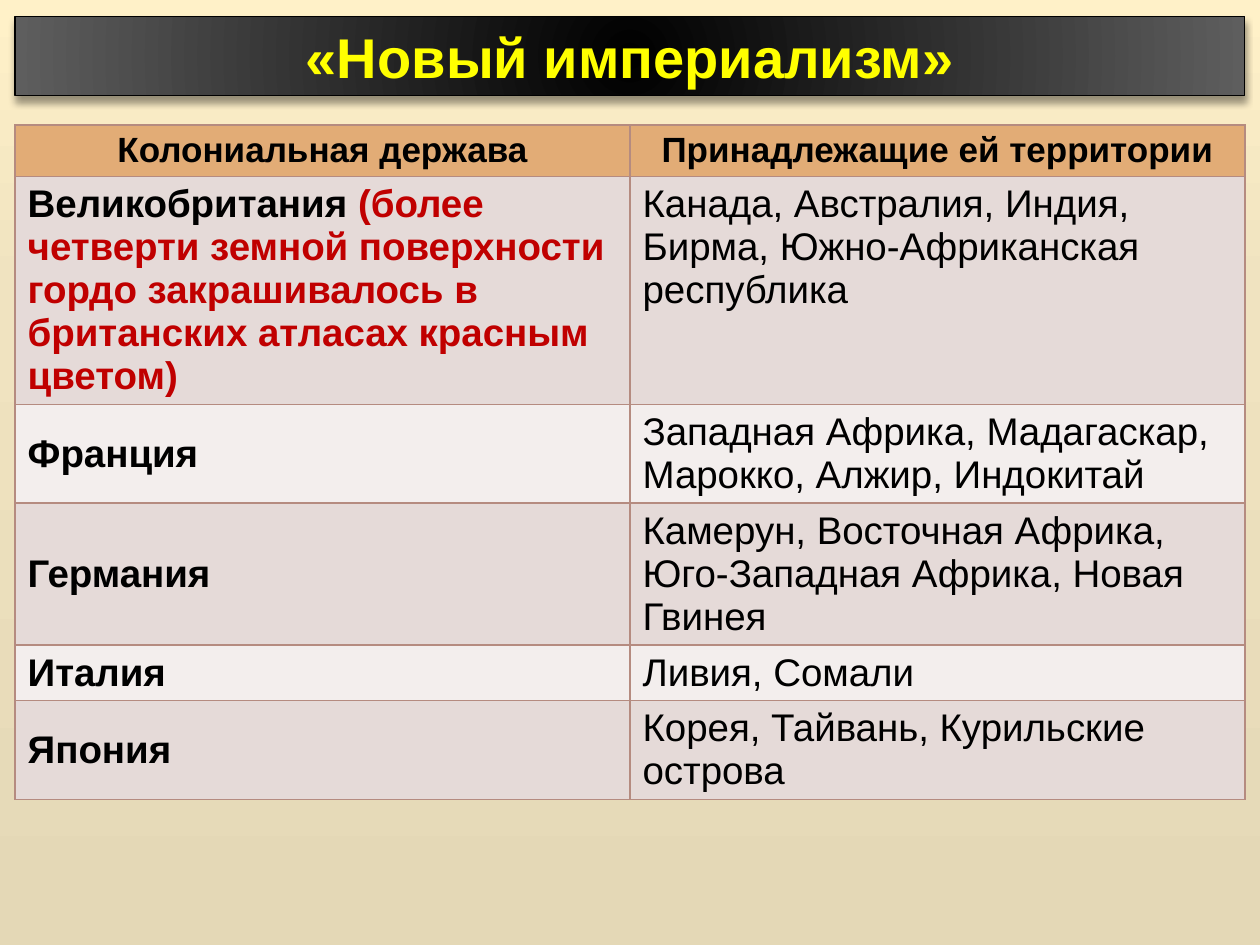
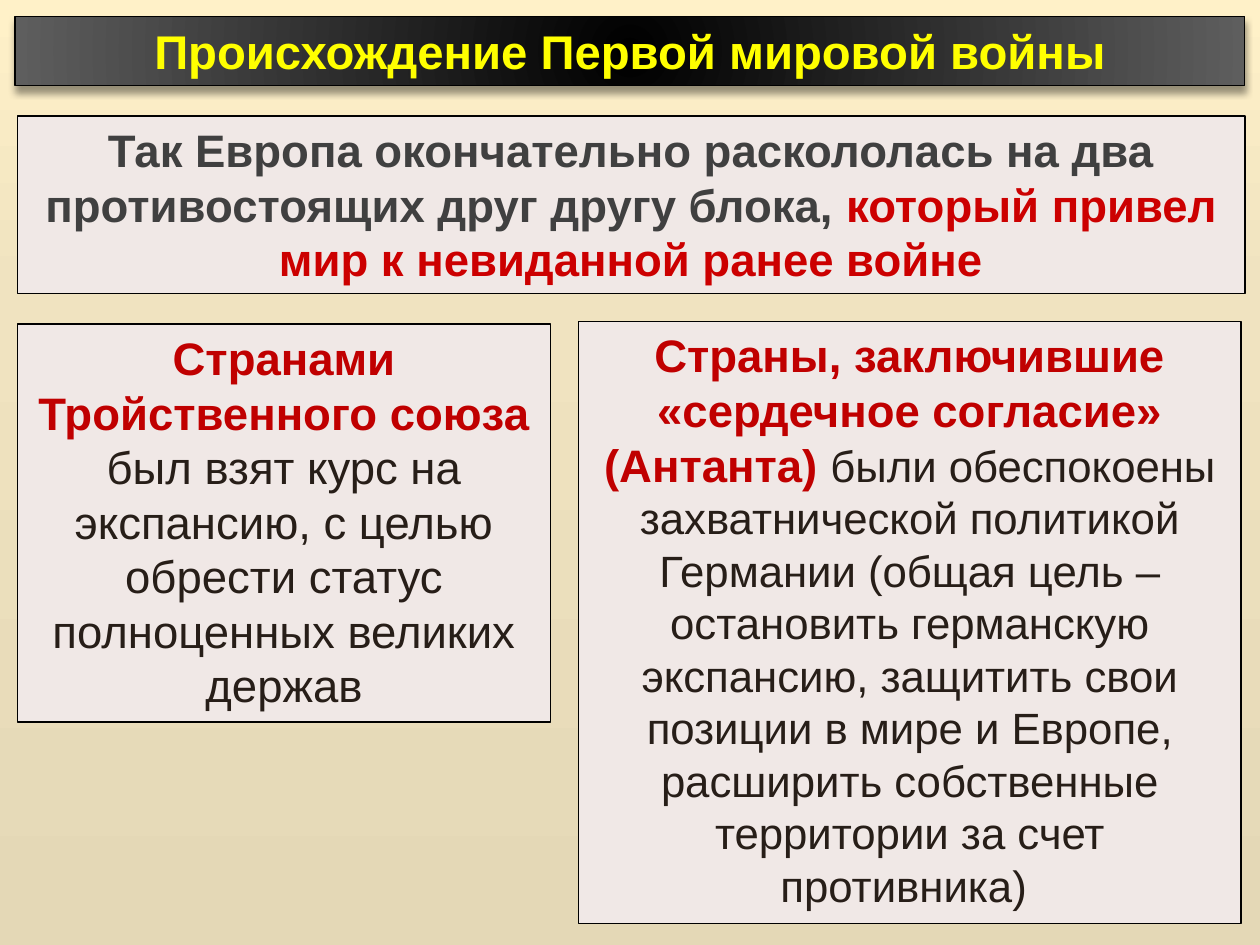
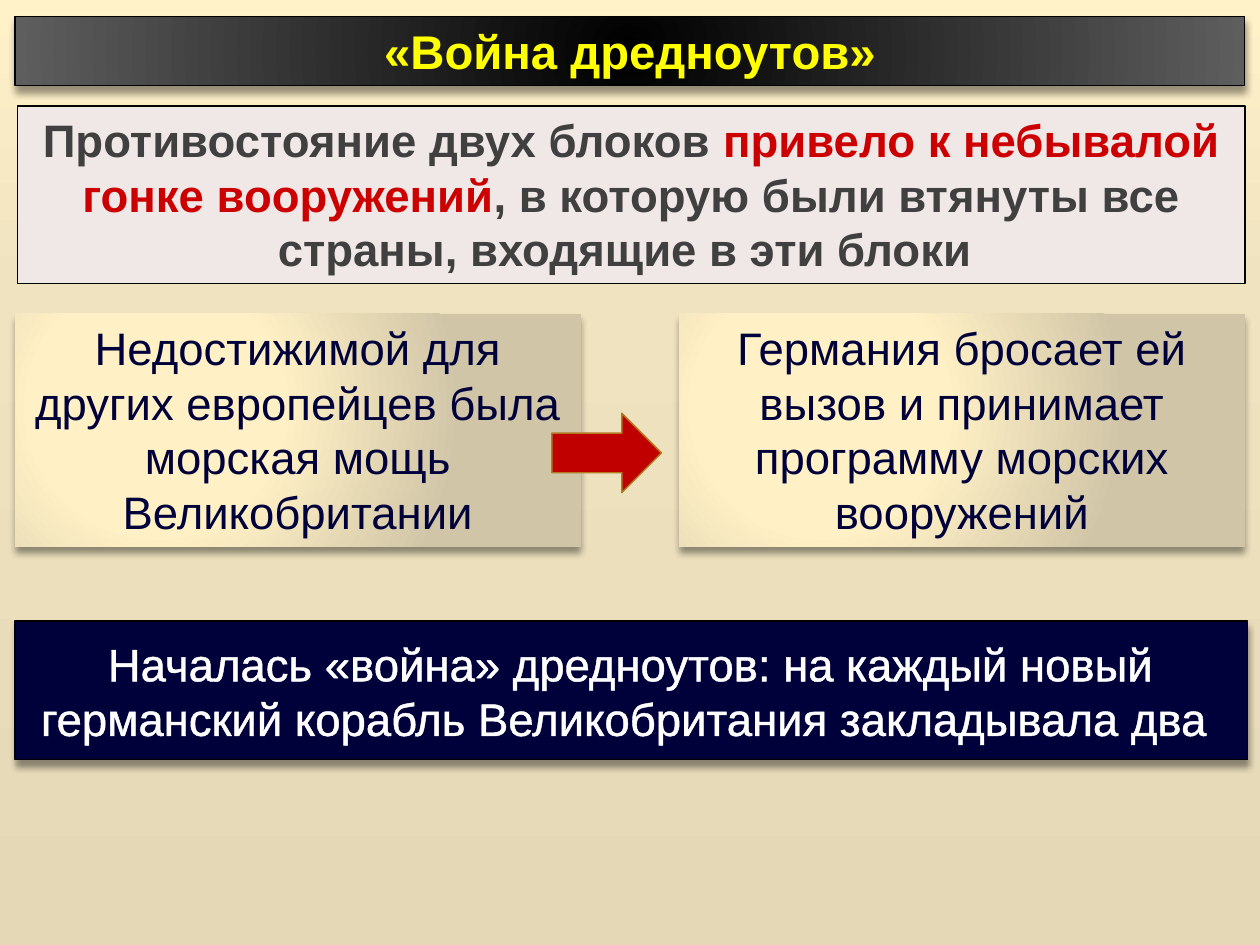
import pptx
import pptx.util
import pptx.oxml
import pptx.oxml.ns
import pptx.dml.color
import pptx.enum.shapes
import pptx.enum.text

Inches = pptx.util.Inches
Pt = pptx.util.Pt
RGB = pptx.dml.color.RGBColor
SHAPE = pptx.enum.shapes.MSO_SHAPE
ALIGN = pptx.enum.text.PP_ALIGN
ANCHOR = pptx.enum.text.MSO_ANCHOR
AUTO = pptx.enum.text.MSO_AUTO_SIZE

# Colours and type
FONT = "Arial"
BLACK = RGB(0x00, 0x00, 0x00)
WHITE = RGB(0xFF, 0xFF, 0xFF)
YELLOW = RGB(0xFF, 0xFF, 0x00)
GREY = RGB(0x40, 0x40, 0x40)
SMOKE = RGB(0x5E, 0x5E, 0x5E)
RED = RGB(0xCC, 0x00, 0x00)
DEEP = RGB(0xC0, 0x00, 0x00)
BROWN = RGB(0x27, 0x1E, 0x18)
NAVY = RGB(0x00, 0x00, 0x3A)
PANEL = RGB(0xF0, 0xE8, 0xE6)
GOLD = RGB(0xB2, 0x78, 0x22)
CREAM = RGB(0xFF, 0xF1, 0xC8)
HEAD = RGB(0xE2, 0xAC, 0x76)
BANDS = [RGB(0xE5, 0xDA, 0xD8), RGB(0xF3, 0xEE, 0xED)]
EDGE = RGB(0xB5, 0x8B, 0x80)

# Gradients: stops, then the centre (left, top, right, bottom) if round
PAGE = ([(0, CREAM), (31, RGB(0xF0, 0xE3, 0xC0)), (100, RGB(0xE4, 0xD8, 0xB6))], None)
BAND = ([(0, BLACK), (100, SMOKE)], (100, 100, 100, 100))
SAND = ([(0, CREAM), (41, RGB(0xFF, 0xF0, 0xC5)), (100, RGB(0xD0, 0xC5, 0xA7))],
        (50, 80, 100, 100))

# Shared places
LEFT, WIDE = 0.12, 9.76
INNER = 0.14

# Content: a run is (text, size, colour, bold)
HEADS = ["Колониальная держава", "Принадлежащие ей территории"]
POWERS = [
    ("Великобритания ",
     "(более четверти земной поверхности гордо закрашивалось в британских атласах красным цветом)",
     "Канада, Австралия, Индия, Бирма, Южно-Африканская республика"),
    ("Франция", "", "Западная Африка, Мадагаскар, Марокко, Алжир, Индокитай"),
    ("Германия", "", "Камерун, Восточная Африка, Юго-Западная Африка, Новая Гвинея"),
    ("Италия", "", "Ливия, Сомали"),
    ("Япония", "", "Корея, Тайвань, Курильские острова"),
]
SPLIT = [
    ("Так Европа окончательно раскололась на два противостоящих друг другу блока, ",
     26, GREY, True),
    ("который привел мир к невиданной ранее войне", 26, RED, True),
]
TRIPLE = [
    ("Странами Тройственного союза ", 26, DEEP, True),
    ("был взят курс на экспансию, с целью обрести статус полноценных великих держав",
     26, BROWN, False),
]
ENTENTE = [
    ("Страны, заключившие «сердечное согласие» (Антанта) ", 26, DEEP, True),
    ("были обеспокоены захватнической политикой Германии (общая цель – остановить "
     "германскую экспансию, защитить свои позиции в мире и Европе, расширить "
     "собственные территории за счет противника) ", 25, BROWN, False),
]
RACE = [
    ("Противостояние двух блоков ", 26, GREY, True),
    ("привело к небывалой гонке вооружений", 26, RED, True),
    (", в которую были втянуты все страны, входящие в эти блоки ", 26, GREY, True),
]
RIVALS = [
    "Недостижимой для других европейцев была морская мощь Великобритании",
    "Германия бросает ей вызов и принимает программу морских вооружений",
]
RESULT = ("Началась «война» дредноутов: на каждый новый германский корабль "
          "Великобритания закладывала два ")


def make(tag, inner="", **attrs):
    """Build one drawing element."""
    text = "".join(f' {key}="{val}"' for key, val in attrs.items())
    return pptx.oxml.parse_xml(
        f'<a:{tag} {pptx.oxml.ns.nsdecls("a")}{text}>{inner}</a:{tag}>')


def solid(color):
    return f'<a:solidFill><a:srgbClr val="{color}"/></a:solidFill>'


def blend(owner, fill, grad):
    """Give a fill its gradient stops and direction."""
    stops, focus = grad
    fill.gradient()
    node = owner.find(".//" + pptx.oxml.ns.qn("a:gradFill"))
    for child in list(node):
        node.remove(child)
    node.append(make("gsLst", "".join(
        f'<a:gs pos="{pos * 1000}"><a:srgbClr val="{color}"/></a:gs>'
        for pos, color in stops)))
    if focus:
        rect = " ".join(f'{side}="{val * 1000}"' for side, val in zip("ltrb", focus))
        node.append(make("path", f"<a:fillToRect {rect}/>", path="circle"))
    else:
        node.append(make("lin", ang=90 * 60000, scaled=0))


def shade(shape):
    """Soft shadow straight below the shape."""
    shape.shadow.inherit = False
    drop = make("outerShdw", '<a:srgbClr val="000000"><a:alpha val="40000"/></a:srgbClr>',
                blurRad=Pt(4), dist=Pt(3.4), dir=90 * 60000, algn="ctr", rotWithShape=0)
    shape._element.spPr.find(pptx.oxml.ns.qn("a:effectLst")).append(drop)


def write(frame, runs, align=ALIGN.CENTER):
    para = frame.paragraphs[0]
    para.alignment = align
    for text, size, color, bold in runs:
        run = para.add_run()
        run.text = text
        font = run.font
        font.name, font.size, font.bold = FONT, Pt(size), bold
        font.color.rgb = color


def paint(shape, fill, line=None, width=0.85):
    if isinstance(fill, tuple) and not isinstance(fill, RGB):
        blend(shape._element, shape.fill, fill)
    else:
        shape.fill.solid()
        shape.fill.fore_color.rgb = fill
    if line is None:
        shape.line.fill.background()
    else:
        shape.line.color.rgb = line
        shape.line.width = Pt(width)


def block(slide, spot, fill, runs=(), line=None, width=0.85, kind=SHAPE.RECTANGLE,
          anchor=ANCHOR.TOP, grow=True, shadow=False):
    shape = slide.shapes.add_shape(kind, *map(Inches, spot))
    paint(shape, fill, line, width)
    shape.shadow.inherit = False
    if shadow:
        shade(shape)
    if runs:
        frame = shape.text_frame
        frame.word_wrap = True
        frame.vertical_anchor = anchor
        frame.auto_size = AUTO.SHAPE_TO_FIT_TEXT if grow else AUTO.NONE
        write(frame, runs)
    return shape


def panel(slide, spot, runs):
    return block(slide, spot, PANEL, runs, line=BLACK)


def page(deck, text, size=27, high=0.55):
    """Add a slide with its title band."""
    slide = deck.slides.add_slide(deck.slide_layouts[5])
    title = slide.shapes.title
    title.left, title.top = Inches(LEFT), Inches(0.13)
    title.width, title.height = Inches(WIDE), Inches(high)
    paint(title, BAND, BLACK, 0.75)
    shade(title)
    frame = title.text_frame
    frame.word_wrap = True
    frame.auto_size = AUTO.NONE
    frame.vertical_anchor = ANCHOR.TOP
    write(frame, [(text, size, YELLOW, True)])
    return slide


def fill_cell(cell, fill, runs, align=ALIGN.LEFT, anchor=ANCHOR.TOP):
    cell.fill.solid()
    cell.fill.fore_color.rgb = fill
    cell.vertical_anchor = anchor
    write(cell.text_frame, runs, align)
    props = cell._tc.get_or_add_tcPr()
    for spot, side in enumerate("LRTB"):
        props.insert(spot, make("ln" + side, solid(EDGE), w=Pt(1)))


def powers(deck):
    slide = page(deck, "«Новый империализм»", 32, 0.63)
    high = Inches(5.7)
    holder = slide.shapes.add_table(len(POWERS) + 1, 2, Inches(LEFT), Inches(0.99),
                                    Inches(WIDE), high)
    table = holder.table
    for row in table.rows:
        row.height = Inches(0.41)
    table.rows[0].height = Inches(0.25)
    holder.height = high
    for col, text in enumerate(HEADS):
        fill_cell(table.cell(0, col), HEAD, [(text, 20, BLACK, True)], ALIGN.CENTER)
    for row, (name, note, lands) in enumerate(POWERS, 1):
        fill = BANDS[(row - 1) % 2]
        runs = [(name, 22, BLACK, True)]
        if note:
            runs.append((note, 22, DEEP, True))
        fill_cell(table.cell(row, 0), fill, runs, anchor=ANCHOR.MIDDLE)
        fill_cell(table.cell(row, 1), fill, [(lands, 22, BLACK, False)])


def blocs(deck):
    slide = page(deck, "Происхождение Первой мировой войны")
    panel(slide, (INNER, 0.92, 9.74, 1.41), SPLIT)
    panel(slide, (INNER, 2.57, 4.23, 3.16), TRIPLE)
    panel(slide, (4.59, 2.55, 5.26, 4.78), ENTENTE)


def fleets(deck):
    slide = page(deck, "«Война дредноутов»")
    panel(slide, (INNER, 0.84, 9.74, 1.41), RACE)

    # Two rivals with an arrow between them
    wide = 4.49
    lefts = [LEFT, LEFT + WIDE - wide]
    for index, (left, text) in enumerate(zip(lefts, RIVALS)):
        if index:
            block(slide, (4.38, 3.28, 0.87, 0.63), DEEP, line=GOLD, kind=SHAPE.RIGHT_ARROW)
        block(slide, (left, 2.49, wide, 1.85), SAND, [(text, 26, NAVY, False)], shadow=True)

    # Outcome, with outlined letters
    band = block(slide, (LEFT, 4.93, 9.78, 1.1), NAVY, [(RESULT, 26, WHITE, False)],
                 line=BLACK, width=0.75, anchor=ANCHOR.MIDDLE, grow=False, shadow=True)
    for run in band.text_frame.paragraphs[0].runs:
        run._r.get_or_add_rPr().insert(0, make("ln", solid(WHITE), w=Pt(1.45)))


def main():
    deck = pptx.Presentation()
    deck.slide_width, deck.slide_height = Inches(10), Inches(7.5)
    master = deck.slide_master
    blend(master._element, master.background.fill, PAGE)
    powers(deck)
    blocs(deck)
    fleets(deck)
    deck.save("out.pptx")


if __name__ == "__main__":
    main()
